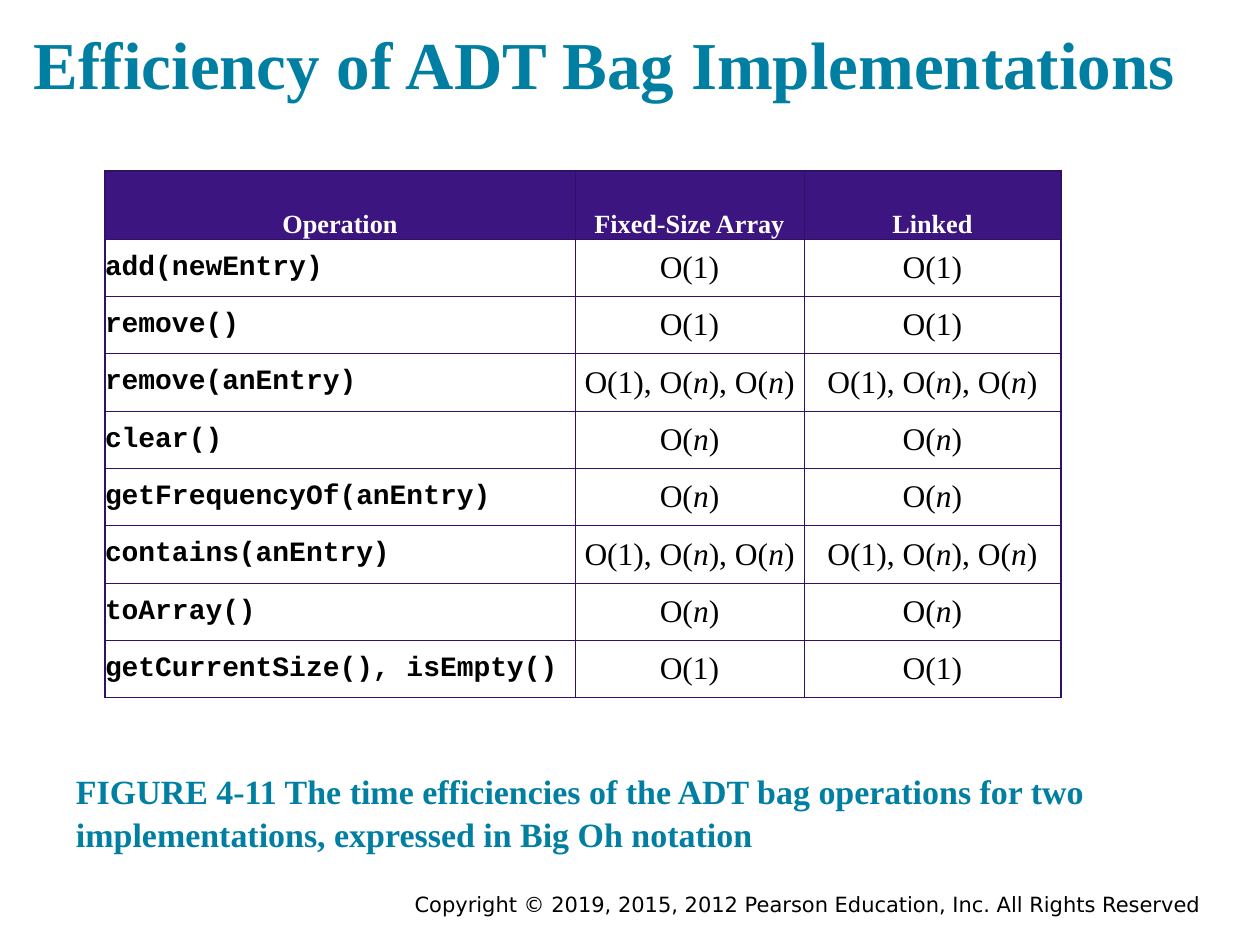
from dataclasses import dataclass

from lxml.etree import SubElement
from pptx import Presentation
from pptx.dml.color import RGBColor
from pptx.enum.text import MSO_ANCHOR as Anchor, PP_ALIGN as Align
from pptx.oxml.ns import qn
from pptx.util import Emu, Pt

EMU_PER_PX = 914400 / 126
COLORS = {
    "teal": "007FA3",
    "purple": "3C1581",
    "border": "301167",
    "white": "FFFFFF",
    "black": "000000",
}
SERIF, MONO, SANS = "Times New Roman", "Courier New", "DejaVu Sans"
ITALIC_MARK = "_"


@dataclass(frozen=True)
class TextBox:
    text: str
    left: int
    top: int
    width: int
    height: int
    inset: int
    size: float
    font: str = SERIF
    color: str = "teal"
    bold: bool = True
    align: Align = Align.LEFT
    anchor: Anchor = Anchor.BOTTOM
    spacing: float = 1.0


@dataclass(frozen=True)
class Operation:
    call: str
    array_cost: str
    linked_cost: str


TEXT_BOXES = [
    TextBox("Copyright © 2019, 2015, 2012 Pearson Education, Inc. All Rights Reserved",
            220, 886, 987, 39, inset=6, size=12, font=SANS, color="black",
            bold=False, align=Align.RIGHT, anchor=Anchor.TOP),
    TextBox("Efficiency of ADT Bag Implementations",
            21, 0, 1173, 116, inset=13, size=38.3),
    TextBox("FIGURE 4-11 The time efficiencies of the ADT bag operations for two "
            "implementations, expressed in Big Oh notation",
            63, 762, 1134, 105, inset=13, size=19.4, spacing=1.05),
]

CONSTANT, LINEAR, MIXED = "O(1)", "O(_n_)", "O(1), O(_n_), O(_n_)"
HEADERS = ["Operation", "Fixed-Size Array", "Linked"]
OPERATIONS = [
    Operation("add(newEntry)", CONSTANT, CONSTANT),
    Operation("remove()", CONSTANT, CONSTANT),
    Operation("remove(anEntry)", MIXED, MIXED),
    Operation("clear()", LINEAR, LINEAR),
    Operation("getFrequencyOf(anEntry)", LINEAR, LINEAR),
    Operation("contains(anEntry)", MIXED, MIXED),
    Operation("toArray()", LINEAR, LINEAR),
    Operation("getCurrentSize(), isEmpty()", CONSTANT, CONSTANT),
]
TABLE_LEFT, TABLE_TOP = 105, 171
COLUMN_WIDTHS = [470, 229, 257]
HEADER_HEIGHT, BODY_HEIGHT = 68, 459


def px(length: float) -> Emu:
    return Emu(round(length * EMU_PER_PX))


def rgb(name: str) -> RGBColor:
    return RGBColor.from_string(COLORS[name])


def write_text(frame, text: str, *, size: float, font: str = SERIF,
               color: str = "black", bold: bool = False,
               align: Align = Align.LEFT, spacing: float = 1.0) -> None:
    """Fill the first paragraph; text between two marks is italic."""
    paragraph = frame.paragraphs[0]
    paragraph.alignment = align
    paragraph.line_spacing = spacing
    for index, part in enumerate(text.split(ITALIC_MARK)):
        run = paragraph.add_run()
        run.text = part
        run.font.size = Pt(size)
        run.font.name = font
        run.font.bold = bold
        run.font.italic = index % 2 == 1
        run.font.color.rgb = rgb(color)


def draw_text_box(slide, box: TextBox) -> None:
    shape = slide.shapes.add_textbox(
        px(box.left), px(box.top), px(box.width), px(box.height))
    frame = shape.text_frame
    frame.word_wrap = True
    frame.vertical_anchor = box.anchor
    frame.margin_left = frame.margin_right = px(box.inset)
    frame.margin_top = frame.margin_bottom = px(box.inset)
    write_text(frame, box.text, size=box.size, font=box.font, color=box.color,
               bold=box.bold, align=box.align, spacing=box.spacing)


def set_borders(cell, widths: dict[str, float]) -> None:
    properties = cell._tc.get_or_add_tcPr()
    for index, (side, width) in enumerate(widths.items()):
        line = SubElement(properties, qn(f"a:ln{side}"), w=str(Pt(width)))
        fill = SubElement(line, qn("a:solidFill"))
        SubElement(fill, qn("a:srgbClr"), val=COLORS["border"])
        properties.insert(index, line)  # borders come before the cell fill


def draw_table(slide) -> None:
    rows = [HEADERS] + [[operation.call, operation.array_cost, operation.linked_cost]
                        for operation in OPERATIONS]
    last_row, last_column = len(rows) - 1, len(HEADERS) - 1
    table = slide.shapes.add_table(
        len(rows), len(HEADERS), px(TABLE_LEFT), px(TABLE_TOP),
        px(sum(COLUMN_WIDTHS)), px(HEADER_HEIGHT + BODY_HEIGHT)).table
    table.horz_banding = False
    for column, width in zip(table.columns, COLUMN_WIDTHS):
        column.width = px(width)

    for r, texts in enumerate(rows):
        table.rows[r].height = px(BODY_HEIGHT / len(OPERATIONS) if r else HEADER_HEIGHT)
        for c, text in enumerate(texts):
            cell = table.cell(r, c)
            cell.margin_left = cell.margin_right = 0
            cell.margin_top = cell.margin_bottom = 0
            cell.vertical_anchor = Anchor.MIDDLE if r else Anchor.BOTTOM
            if r == 0:
                cell.fill.solid()
                cell.fill.fore_color.rgb = rgb("purple")
                style = dict(size=15, color="white", bold=True, align=Align.CENTER)
            else:
                cell.fill.background()
                style = (dict(size=18, align=Align.CENTER) if c
                         else dict(size=16, font=MONO, bold=True))
            write_text(cell.text_frame, text, **style)
            # Outer edges are twice as thick as the inner grid
            outer = {"L": c == 0, "R": c == last_column,
                     "T": r == 0, "B": r == last_row}
            set_borders(cell, {side: 1 if edge else 0.5
                               for side, edge in outer.items()})


def main() -> None:
    presentation = Presentation()
    presentation.slide_width, presentation.slide_height = px(1260), px(945)
    slide = presentation.slides.add_slide(presentation.slide_layouts[6])

    # Footer, title and caption
    for box in TEXT_BOXES:
        draw_text_box(slide, box)

    # Efficiency table
    draw_table(slide)

    presentation.save("out.pptx")


if __name__ == "__main__":
    main()
